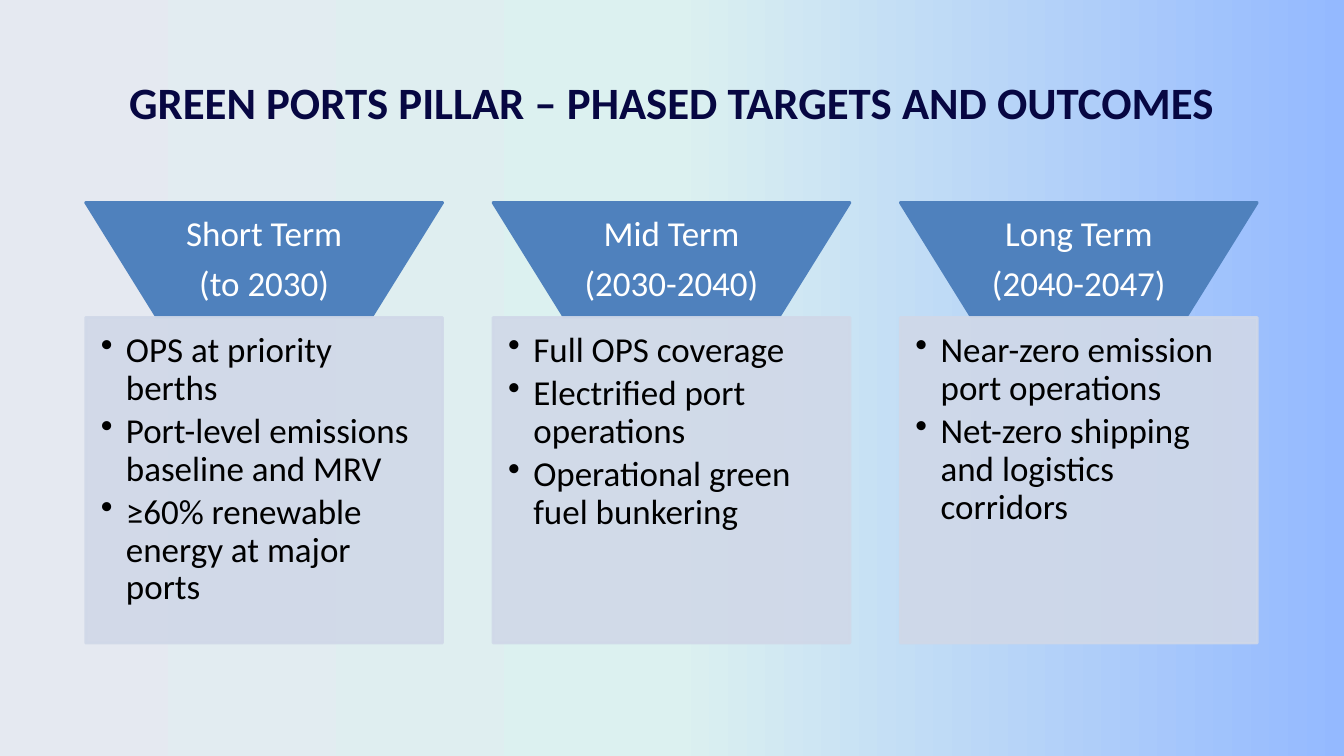
from lxml.etree import SubElement
from pptx import Presentation
from pptx.dml.color import RGBColor
from pptx.enum.shapes import MSO_SHAPE as Preset
from pptx.enum.text import MSO_ANCHOR as Anchor, PP_ALIGN as Align
from pptx.oxml.ns import qn
from pptx.util import Inches, Pt

COLORS = {
    "title": "070742", "header": "4F81BD", "header_text": "FFFFFF",
    "panel": "D0D8E8", "panel_text": "000000",
}
BACKDROP = [(0, "E5E9F1"), (50, "DCF1F0"), (100, "94B9FF")]
PHASES = [
    (["Short Term", "(to 2030)"],
     ["OPS at priority berths", "Port-level emissions baseline and MRV",
      "≥60% renewable energy at major ports"]),
    (["Mid Term", "(2030-2040)"],
     ["Full OPS coverage", "Electrified port operations",
      "Operational green fuel bunkering"]),
    (["Long Term", "(2040-2047)"],
     ["Near-zero emission port operations",
      "Net-zero shipping and logistics corridors"]),
]
LEFT, PITCH, WIDTH = 0.85, 4.04, 3.54
HEADER_TOP, HEADER_HEIGHT, PANEL_HEIGHT = 2.01, 1.14, 3.23


class PhaseSlide:
    """Holds the text style and the slide being built."""

    font_name = "Calibri"
    text_size = 25

    def __init__(self, slide):
        self.slide = slide

    def backdrop(self, stops):
        fill = self.slide.background.fill
        fill.gradient()
        fill.gradient_angle = 0
        stop_list = self.slide.element.find(".//" + qn("a:gsLst"))
        stop_list.clear()
        for percent, color in stops:
            stop = SubElement(stop_list, qn("a:gs"), pos=str(percent * 1000))
            SubElement(stop, qn("a:srgbClr"), val=color)

    def add_run(self, paragraph, text, color, size, bold=False):
        run = paragraph.add_run()
        run.text = text
        run.font.name = self.font_name
        run.font.size = Pt(size)
        run.font.bold = bold
        run.font.color.rgb = RGBColor.from_string(COLORS[color])

    def title(self, text):
        title = self.slide.shapes.title
        title.left, title.top = Inches(0.01), Inches(0.28)
        title.width, title.height = Inches(13.31), Inches(1.45)
        title.text_frame.vertical_anchor = Anchor.MIDDLE
        heading = title.text_frame.paragraphs[0]
        heading.alignment = Align.CENTER
        self.add_run(heading, text, "title", 32, bold=True)

    def block(self, preset, box, color, insets, anchor):
        block = self.slide.shapes.add_shape(preset, *map(Inches, box))
        block.shadow.inherit = False
        block.fill.solid()
        block.line.width = Pt(2)
        for paint in (block.fill.fore_color, block.line.color):
            paint.rgb = RGBColor.from_string(COLORS[color])
        frame = block.text_frame
        frame.word_wrap = True
        frame.vertical_anchor = anchor
        (frame.margin_left, frame.margin_top,
         frame.margin_right, frame.margin_bottom) = map(Inches, insets)
        return block

    def add_lines(self, frame, lines, color, align, space_share, bulleted=False):
        for index, line in enumerate(lines):
            paragraph = frame.add_paragraph() if index else frame.paragraphs[0]
            paragraph.alignment = align
            paragraph.line_spacing = 0.9
            paragraph.space_after = Pt(self.text_size * space_share)
            if bulleted:
                properties = paragraph._p.get_or_add_pPr()
                properties.set("marL", str(Inches(0.25)))
                properties.set("indent", str(Inches(-0.25)))
                SubElement(properties, qn("a:buChar"), char="•")
            self.add_run(paragraph, line, color, self.text_size)

    def header(self, left, lines):
        box = (left, HEADER_TOP, WIDTH, HEADER_HEIGHT)
        header = self.block(Preset.FLOWCHART_MANUAL_OPERATION, box, "header",
                            (0.19, 0.11, 0.19, 0.11), Anchor.MIDDLE)
        self.add_lines(header.text_frame, lines, "header_text", Align.CENTER, 0.35)

    def panel(self, left, targets):
        box = (left, HEADER_TOP + HEADER_HEIGHT, WIDTH, PANEL_HEIGHT)
        panel = self.block(Preset.RECTANGLE, box, "panel",
                           (0.15, 0.15, 0.19, 0.22), Anchor.TOP)
        for paint in panel.element.spPr.iter(qn("a:srgbClr")):
            SubElement(paint, qn("a:alpha"), val="90000")
        self.add_lines(panel.text_frame, targets, "panel_text", Align.LEFT, 0.15,
                       bulleted=True)


def main():
    deck = Presentation()
    deck.slide_width, deck.slide_height = Inches(13.33), Inches(7.5)
    page = PhaseSlide(deck.slides.add_slide(deck.slide_layouts[5]))
    page.backdrop(BACKDROP)
    page.title("GREEN PORTS PILLAR – PHASED TARGETS AND OUTCOMES")
    for column, (period, targets) in enumerate(PHASES):
        left = LEFT + column * PITCH
        page.header(left, period)
        page.panel(left, targets)
    deck.save("out.pptx")


if __name__ == "__main__":
    main()
